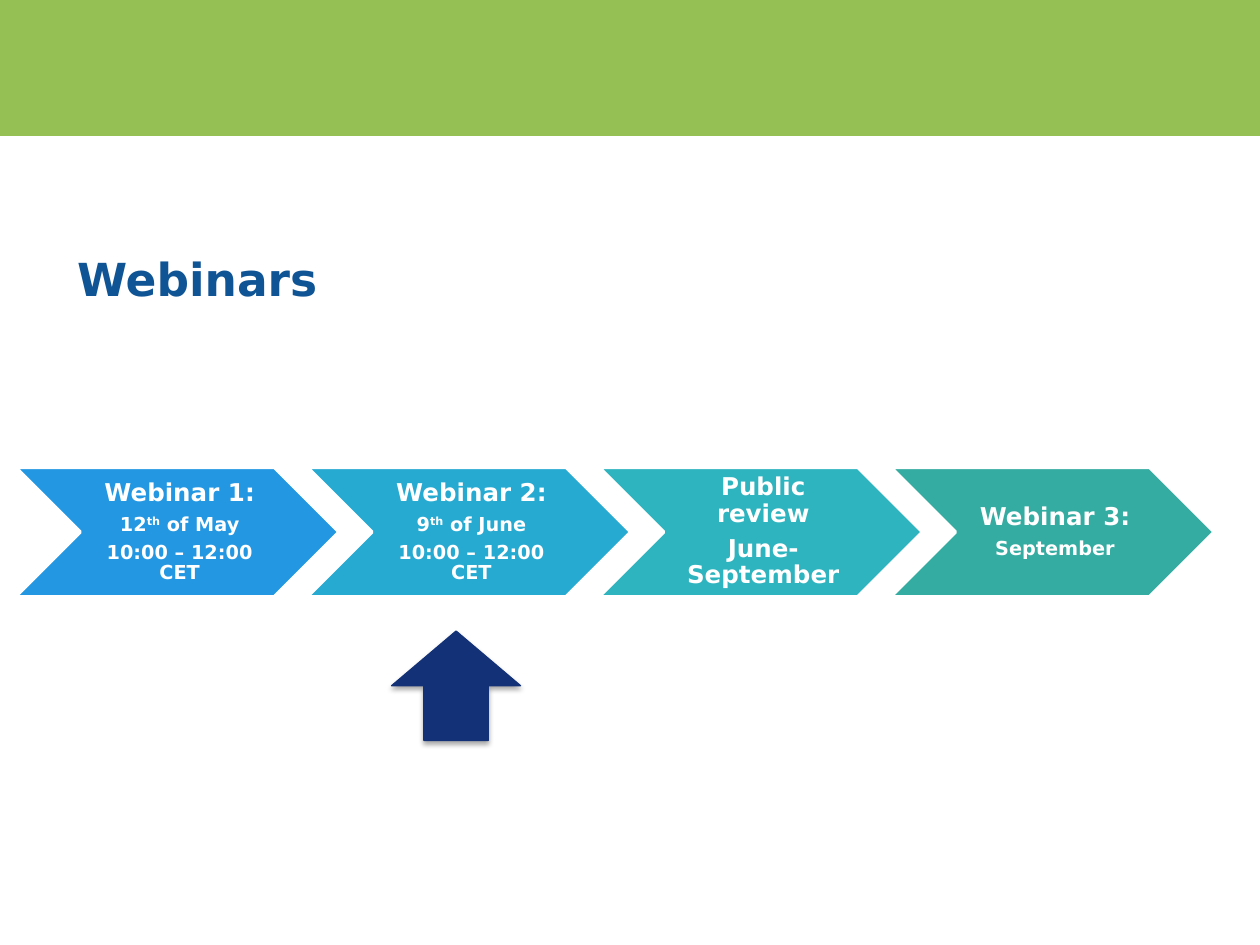
from lxml.etree import SubElement
from pptx import Presentation
from pptx.dml.color import RGBColor
from pptx.enum.shapes import MSO_SHAPE
from pptx.enum.text import MSO_ANCHOR, PP_ALIGN
from pptx.oxml.ns import qn
from pptx.util import Pt

WHITE = RGBColor(0xFF, 0xFF, 0xFF)
GREEN = RGBColor(0x95, 0xC1, 0x54)
BLUE = RGBColor(0x0F, 0x54, 0x94)
NAVY = RGBColor(0x13, 0x31, 0x76)
SKY = RGBColor(0x23, 0x97, 0xE2)
CYAN = RGBColor(0x27, 0xAA, 0xD2)
TEAL = RGBColor(0x2E, 0xB4, 0xBF)
SEA = RGBColor(0x35, 0xAC, 0xA2)
FONT = "DejaVu Sans"

# Each step: fill, then lines as (size, text pieces); every second piece is raised
STEPS = [
    (SKY, [(14, ["Webinar 1:"]), (11, ["12", "th", " of May"]),
           (11, ["10:00 – 12:00 CET"])]),
    (CYAN, [(14, ["Webinar 2:"]), (11, ["9", "th", " of June"]),
            (11, ["10:00 – 12:00 CET"])]),
    (TEAL, [(14, ["Public review"]), (14, ["June-September"])]),
    (SEA, [(14, ["Webinar 3:"]), (11, ["September"])]),
]


def add_shape(slide, kind, box, fill, line=None, width=0):
    shape = slide.shapes.add_shape(kind, *map(Pt, box))
    shape.shadow.inherit = False
    shape.fill.solid()
    shape.fill.fore_color.rgb = fill
    if line is None:
        shape.line.fill.background()
    else:
        shape.line.color.rgb = line
        shape.line.width = Pt(width)
    return shape


def add_frame(slide, box):
    frame = slide.shapes.add_textbox(*map(Pt, box)).text_frame
    frame.word_wrap = True
    frame.vertical_anchor = MSO_ANCHOR.MIDDLE
    return frame


def set_font(font, size, color):
    font.name = FONT
    font.size = Pt(size)
    font.bold = True
    font.color.rgb = color


def add_title(slide, box, text):
    frame = add_frame(slide, box)
    frame.text = text
    set_font(frame.paragraphs[0].runs[0].font, 26, BLUE)


def add_step(slide, box, fill, lines):
    left, top, width, height = box
    add_shape(slide, MSO_SHAPE.CHEVRON, box, fill, WHITE, 2)
    inset = height / 2
    frame = add_frame(slide, (left + inset, top, width - 2 * inset, height))
    frame.margin_left = Pt(4.2)
    frame.margin_right = frame.margin_top = frame.margin_bottom = Pt(1.4)
    for i, (size, parts) in enumerate(lines):
        para = frame.paragraphs[0] if i == 0 else frame.add_paragraph()
        para.alignment = PP_ALIGN.CENTER
        para.line_spacing = 0.9
        para.space_after = Pt(0.35 * size)
        for j, part in enumerate(parts):
            run = para.add_run()
            run.text = part
            set_font(run.font, size, WHITE)
            if j % 2:
                run.font._element.set("baseline", "30000")


def add_steps(slide, box, steps):
    """Spread equal, overlapping chevrons over the box."""
    left, top, width, height = box
    wide = 2.5 * height
    pitch = (width - wide) / (len(steps) - 1)
    for i, (fill, lines) in enumerate(steps):
        add_step(slide, (left + i * pitch, top, wide, height), fill, lines)


def add_marker(slide, box):
    arrow = add_shape(slide, MSO_SHAPE.UP_ARROW, box, NAVY, NAVY, 0.75)
    effects = arrow._element.spPr.find(qn("a:effectLst"))
    shadow = SubElement(effects, qn("a:outerShdw"), blurRad=str(Pt(3.1)),
                        dist=str(Pt(1.8)), dir="5400000", rotWithShape="0")
    color = SubElement(shadow, qn("a:srgbClr"), val="000000")
    SubElement(color, qn("a:alpha"), val="35000")


def main():
    deck = Presentation()
    deck.slide_width, deck.slide_height = Pt(720), Pt(540)
    slide = deck.slides.add_slide(deck.slide_layouts[6])
    add_shape(slide, MSO_SHAPE.RECTANGLE, (0, 0, 720, 77.7), GREEN)
    add_steps(slide, (8.8, 267, 685.2, 74), STEPS)
    add_title(slide, (37, 122.4, 648, 73.4), "Webinars")
    add_marker(slide, (223.8, 360.6, 73.7, 62.5))
    deck.save("out.pptx")


if __name__ == "__main__":
    main()
